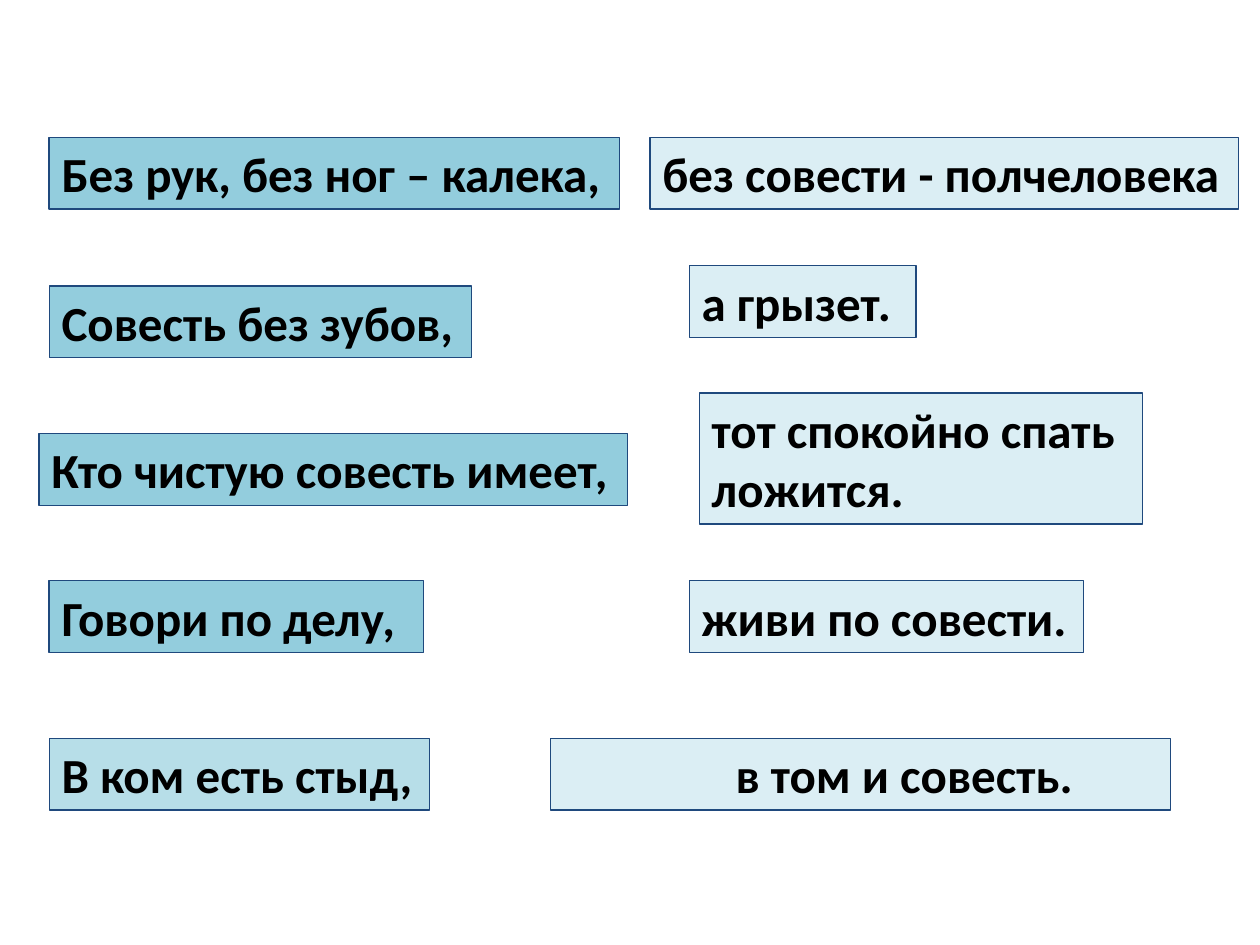
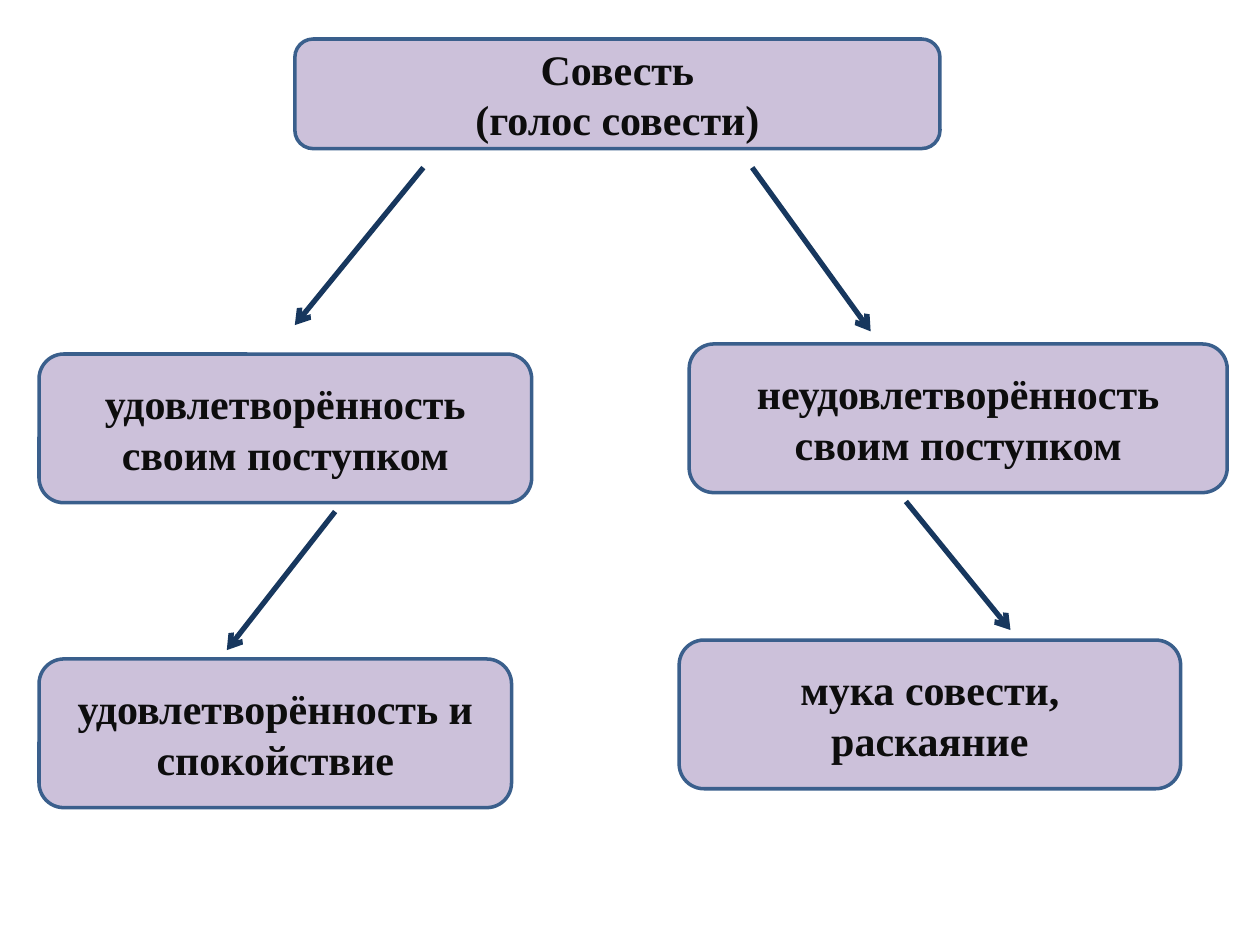
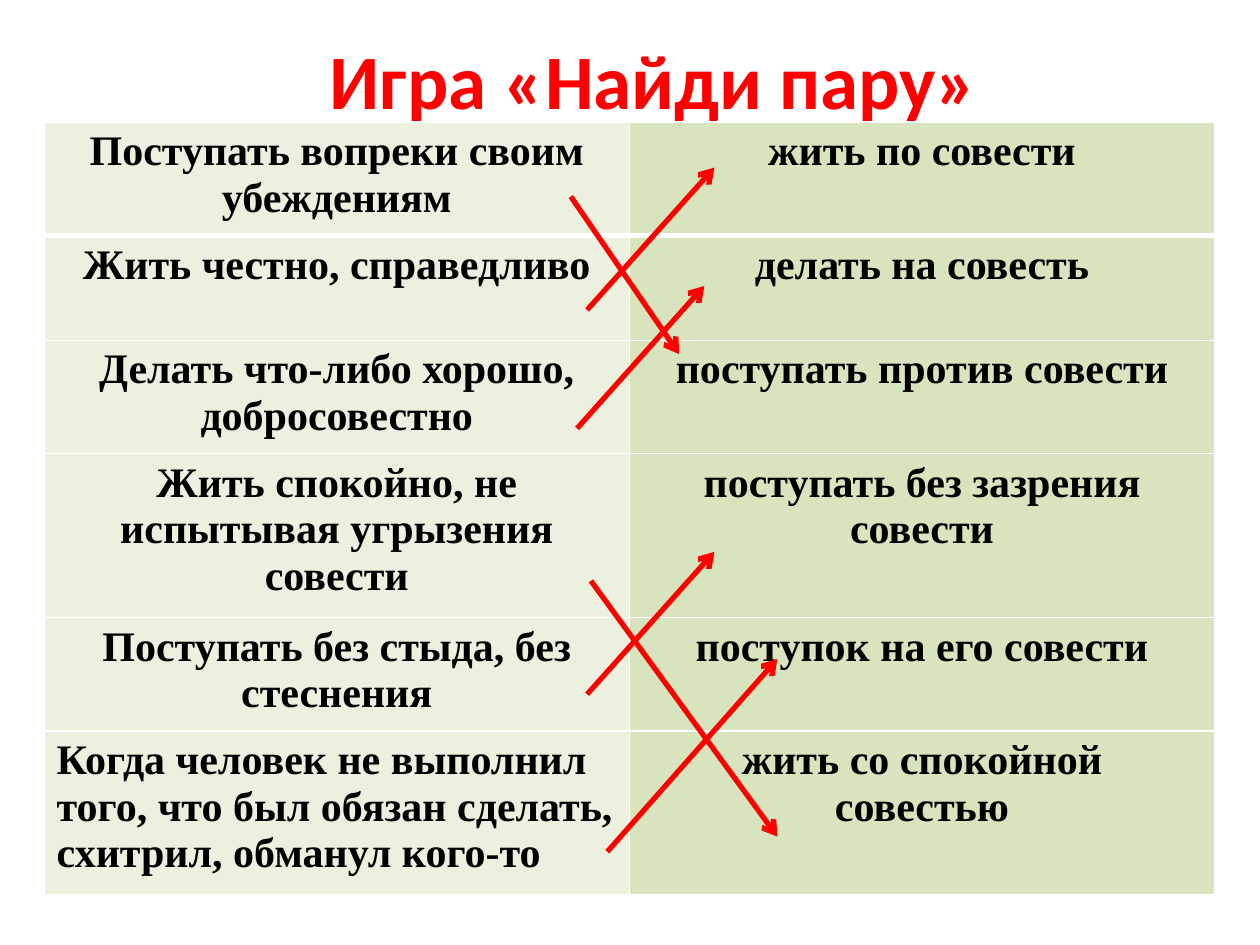
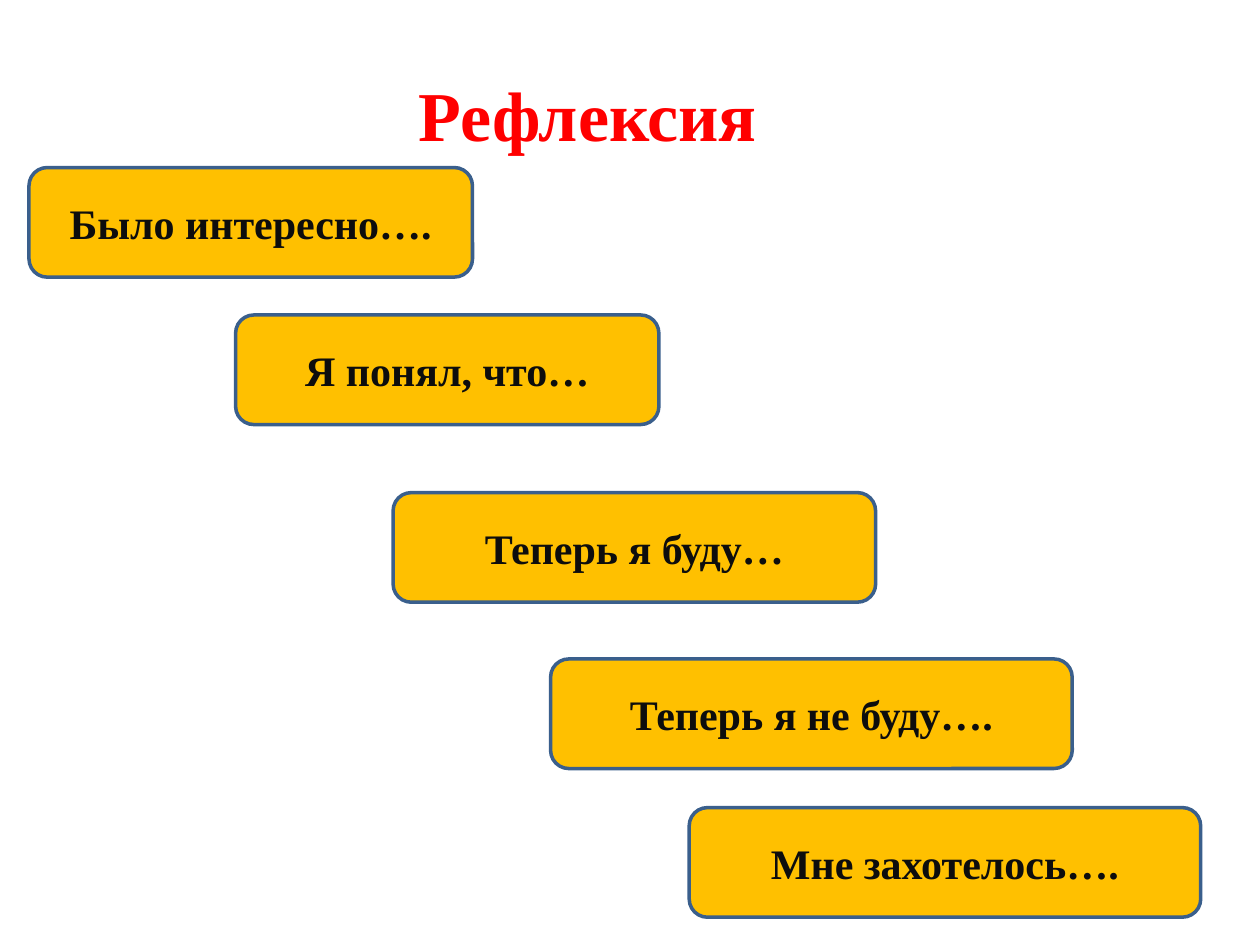
"""Build four slides about conscience: proverbs, a scheme, a matching game and reflection."""
from dataclasses import dataclass
from typing import NamedTuple

from lxml.etree import SubElement
from pptx import Presentation
from pptx.dml.color import RGBColor
from pptx.enum.shapes import MSO_CONNECTOR, MSO_SHAPE
from pptx.enum.text import MSO_ANCHOR, PP_ALIGN
from pptx.oxml.ns import qn
from pptx.slide import Slide
from pptx.table import _Cell
from pptx.text.text import TextFrame
from pptx.util import Emu, Pt

EMU_PER_PX = 9144
PAGE_WIDTH, PAGE_HEIGHT = 1000, 750

WHITE = RGBColor(0xFF, 0xFF, 0xFF)
BLACK = RGBColor(0x00, 0x00, 0x00)
INK = RGBColor(0x0D, 0x0D, 0x0D)
RED = RGBColor(0xFF, 0x00, 0x00)
AQUA = RGBColor(0x93, 0xCD, 0xDD)
SOFT_AQUA = RGBColor(0xB7, 0xDE, 0xE8)
PALE_AQUA = RGBColor(0xDB, 0xEE, 0xF4)
LILAC = RGBColor(0xCC, 0xC1, 0xDA)
AMBER = RGBColor(0xFF, 0xC0, 0x00)
PALE_GREEN = RGBColor(0xEB, 0xF1, 0xDE)
GREEN = RGBColor(0xD7, 0xE4, 0xBD)
NAVY = RGBColor(0x1F, 0x49, 0x7D)
DARK_NAVY = RGBColor(0x17, 0x37, 0x5E)
STEEL = RGBColor(0x3A, 0x5F, 0x8C)

SANS = "Calibri"
SERIF = "Times New Roman"


class TextStyle(NamedTuple):
    """Font, size, colour and alignment of bold text."""
    font: str
    size: int
    color: RGBColor
    align: PP_ALIGN = PP_ALIGN.CENTER


class BoxStyle(NamedTuple):
    """Outline, line and text style of a kind of box."""
    shape: MSO_SHAPE
    line: RGBColor
    line_width: float
    text: TextStyle


class Arrow(NamedTuple):
    """Start and end of an arrow in px."""
    x1: int
    y1: int
    x2: int
    y2: int


@dataclass(frozen=True)
class Box:
    """A filled box with its text, in px."""
    text: str
    left: int
    top: int
    width: int
    height: int
    fill: RGBColor
    indent: int = 0


PROVERB = BoxStyle(MSO_SHAPE.RECTANGLE, NAVY, 0.75,
                   TextStyle(SANS, 28, BLACK, PP_ALIGN.LEFT))
CARD = BoxStyle(MSO_SHAPE.ROUNDED_RECTANGLE, STEEL, 2, TextStyle(SERIF, 24, INK))
CELL_TEXT = TextStyle(SERIF, 24, BLACK)

PROVERBS = [
    Box("Без рук, без ног – калека,", 39, 109, 453, 57, AQUA),
    Box("без совести - полчеловека", 516, 109, 467, 57, PALE_AQUA),
    Box("Совесть без зубов,", 39, 227, 335, 57, AQUA),
    Box("а грызет.", 547, 211, 180, 57, PALE_AQUA),
    Box("Кто чистую совесть имеет,", 31, 344, 467, 57, AQUA),
    Box("тот спокойно спать ложится.", 555, 312, 352, 104, PALE_AQUA),
    Box("Говори по делу,", 39, 461, 297, 57, AQUA),
    Box("живи по совести.", 547, 461, 313, 57, PALE_AQUA),
    Box("В ком есть стыд,", 39, 586, 302, 57, SOFT_AQUA),
    Box("в том и совесть.", 437, 586, 492, 57, PALE_AQUA, indent=137),
]

SCHEME = [
    Box("Совесть\n(голос совести)", 234, 31, 512, 87, LILAC),
    Box("удовлетворённость\nсвоим поступком", 31, 281, 391, 118, LILAC),
    Box("удовлетворённость и\nспокойствие", 31, 523, 375, 118, LILAC),
    Box("неудовлетворённость\nсвоим поступком", 547, 273, 427, 118, LILAC),
    Box("мука совести,\nраскаяние", 539, 508, 398, 118, LILAC),
]
SCHEME_ARROWS = [
    Arrow(336, 133, 234, 258),
    Arrow(266, 406, 180, 516),
    Arrow(597, 133, 691, 263),
    Arrow(719, 398, 802, 500),
]

PAIRS = [
    ("Поступать вопреки своим убеждениям", "жить по совести"),
    ("Жить честно, справедливо", "делать на совесть"),
    ("Делать что-либо хорошо, добросовестно", "поступать против совести"),
    ("Жить спокойно, не испытывая угрызения совести", "поступать без зазрения совести"),
    ("Поступать без стыда, без стеснения", "поступок на его совести"),
    ("Когда человек не выполнил того, что был обязан сделать, схитрил, обманул кого-то",
     "жить со спокойной\vсовестью"),
]
PAIR_ARROWS = [
    Arrow(453, 156, 539, 281),
    Arrow(466, 246, 567, 133),
    Arrow(458, 340, 559, 227),
    Arrow(469, 461, 617, 664),
    Arrow(466, 551, 567, 438),
    Arrow(482, 676, 617, 523),
]

REFLECTION = [
    Box("Было интересно….", 23, 133, 352, 87, AMBER),
    Box("Я понял, что…", 187, 250, 336, 87, AMBER),
    Box("Теперь я буду…", 312, 391, 383, 87, AMBER),
    Box("Теперь я не буду….", 437, 523, 414, 87, AMBER),
    Box("Мне захотелось….", 547, 641, 406, 87, AMBER),
]


def px(length: int) -> Emu:
    """Turn px into EMU."""
    return Emu(length * EMU_PER_PX)


def write(frame: TextFrame, text: str, style: TextStyle) -> None:
    """Fill a text frame and format its runs."""
    frame.text = text
    frame.word_wrap = True
    for para in frame.paragraphs:
        para.alignment = style.align
        for span in para.runs:
            span.font.name = style.font
            span.font.size = Pt(style.size)
            span.font.bold = True
            span.font.color.rgb = style.color


def draw_boxes(page: Slide, boxes: list[Box], style: BoxStyle) -> None:
    """Draw boxes that share one style."""
    for box in boxes:
        shape = page.shapes.add_shape(style.shape, px(box.left), px(box.top),
                                      px(box.width), px(box.height))
        shape.shadow.inherit = False
        shape.fill.solid()
        shape.fill.fore_color.rgb = box.fill
        shape.line.color.rgb = style.line
        shape.line.width = Pt(style.line_width)
        write(shape.text_frame, box.text, style.text)
        shape.text_frame.vertical_anchor = MSO_ANCHOR.MIDDLE
        if box.indent:
            properties = shape.text_frame.paragraphs[0]._p.get_or_add_pPr()
            properties.set("marL", str(px(box.indent)))


def draw_arrows(page: Slide, arrows: list[Arrow], color: RGBColor) -> None:
    """Draw straight arrows with an open head at the end."""
    for arrow in arrows:
        line = page.shapes.add_connector(MSO_CONNECTOR.STRAIGHT, *map(px, arrow))
        line.line.color.rgb = color
        line.line.width = Pt(3)
        SubElement(line.line._get_or_add_ln(), qn("a:tailEnd"), type="arrow")
        SubElement(line._element.spPr, qn("a:effectLst"))


def draw_title(page: Slide, text: str, left: int, top: int, width: int, height: int,
               font: str, size: int) -> None:
    """Draw a red centred title."""
    box = page.shapes.add_textbox(px(left), px(top), px(width), px(height))
    write(box.text_frame, text, TextStyle(font, size, RED))


def set_borders(cell: _Cell, bottom_width: int) -> None:
    """Give a cell white borders, placed ahead of its fill."""
    properties = cell._tc.get_or_add_tcPr()
    widths = {"a:lnL": 1, "a:lnR": 1, "a:lnT": 1, "a:lnB": bottom_width}
    for position, (tag, width) in enumerate(widths.items()):
        border = SubElement(properties, qn(tag), w=str(Pt(width)))
        solid = SubElement(border, qn("a:solidFill"))
        SubElement(solid, qn("a:srgbClr"), val=str(WHITE))
        properties.insert(position, border)


def draw_pairs(page: Slide) -> None:
    """Draw the table of phrases to match."""
    frame = page.shapes.add_table(len(PAIRS), 2, px(35), px(97), px(929), px(613))
    table = frame.table
    table.first_row = table.horz_banding = False
    for row_index, pair in enumerate(PAIRS):
        table.rows[row_index].height = px(83)
        for column, (text, fill) in enumerate(zip(pair, (PALE_GREEN, GREEN))):
            cell = table.cell(row_index, column)
            write(cell.text_frame, text, CELL_TEXT)
            cell.fill.solid()
            cell.fill.fore_color.rgb = fill
            set_borders(cell, bottom_width=1 if row_index else 3)
    table.cell(len(PAIRS) - 1, 0).text_frame.paragraphs[0].alignment = PP_ALIGN.LEFT
    frame.height = px(613)


def main() -> None:
    """Build and save the deck."""
    deck = Presentation()
    deck.slide_width, deck.slide_height = px(PAGE_WIDTH), px(PAGE_HEIGHT)
    blank = deck.slide_layouts[6]
    proverbs, scheme, game, reflection = (deck.slides.add_slide(blank) for _ in range(4))

    draw_boxes(proverbs, PROVERBS, PROVERB)

    draw_boxes(scheme, SCHEME, CARD)
    draw_arrows(scheme, SCHEME_ARROWS, DARK_NAVY)

    draw_title(game, "Игра «Найди пару»", 217, 21, 604, 84, SANS, 44)
    draw_pairs(game)
    draw_arrows(game, PAIR_ARROWS, RED)

    draw_title(reflection, "Рефлексия", 321, 52, 291, 77, SERIF, 40)
    draw_boxes(reflection, REFLECTION, CARD)

    deck.save("out.pptx")


if __name__ == "__main__":
    main()
